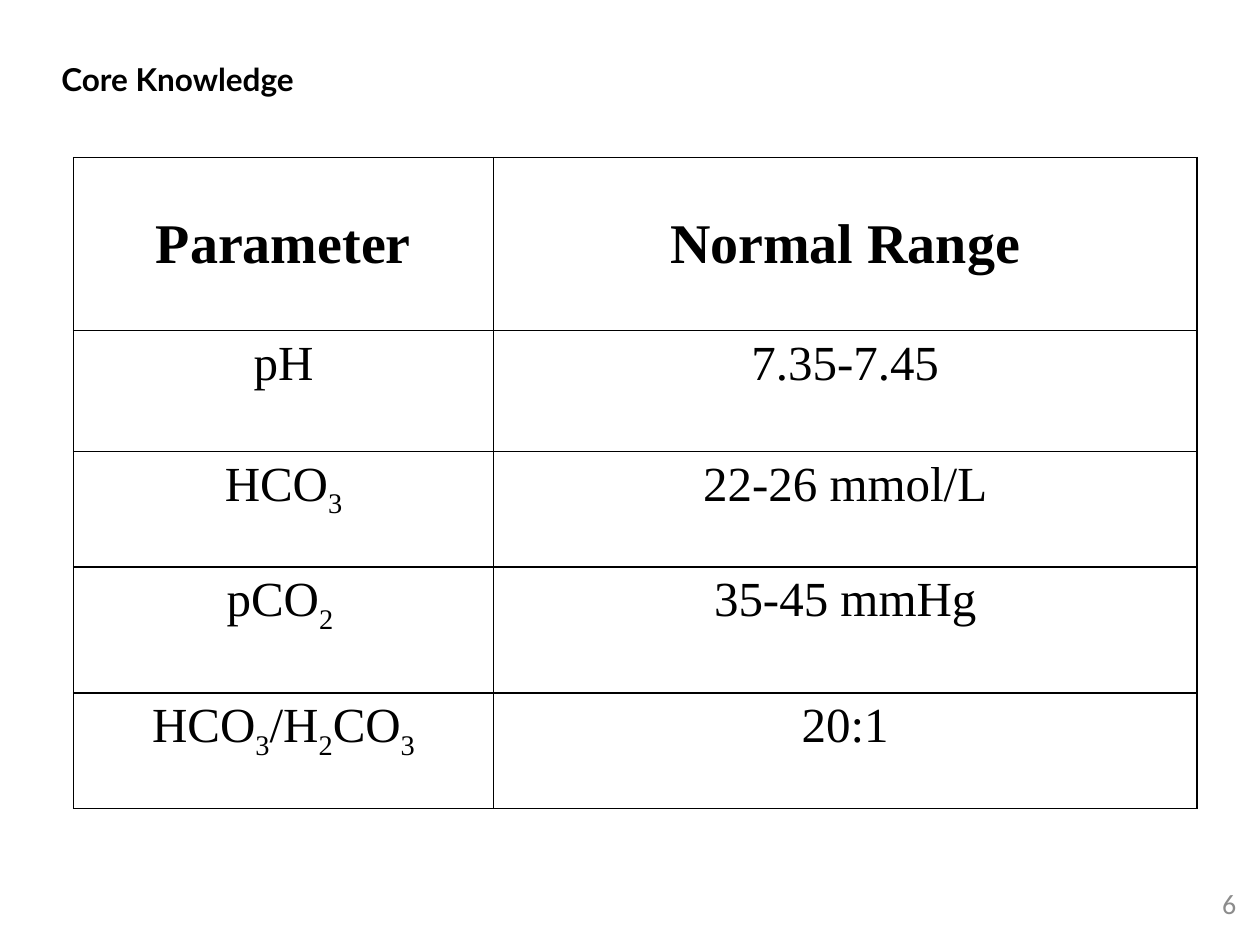
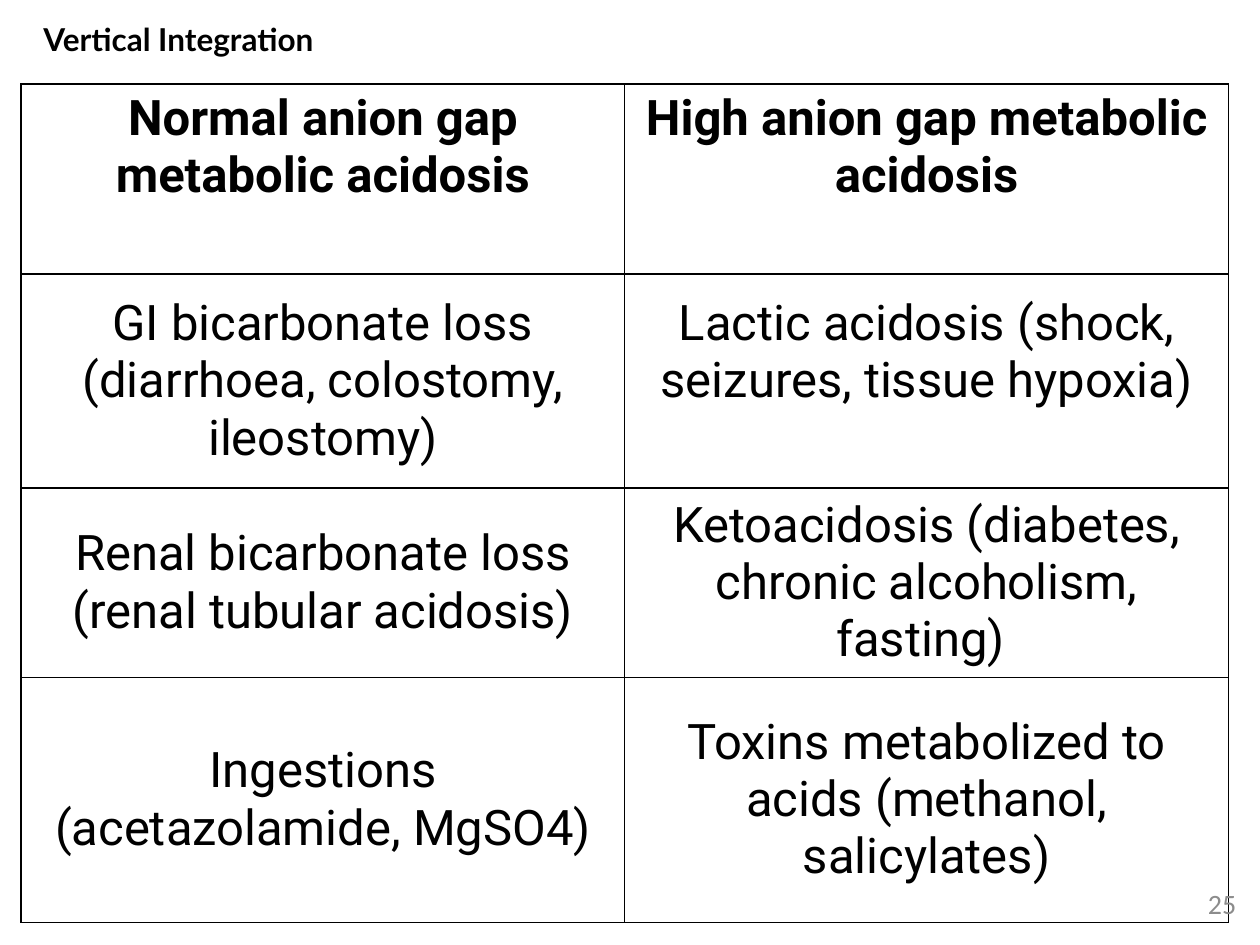
from lxml.etree import SubElement
from pptx import Presentation
from pptx.dml.color import RGBColor
from pptx.enum.text import MSO_ANCHOR as Anchor, PP_ALIGN as Align
from pptx.oxml.ns import qn
from pptx.util import Pt

BLACK = RGBColor(0x00, 0x00, 0x00)
WHITE = RGBColor(0xFF, 0xFF, 0xFF)
GRAY = RGBColor(0x8C, 0x8C, 0x8C)

TITLE_FONT = {"name": "Lato", "size": Pt(18), "bold": True}
NUMBER_FONT = {"name": "Calibri", "size": Pt(16), "bold": False}
NUMBER_BOX = (670.5, 492, 43, 48)
SUBSCRIPT = "-25000"
BORDER_SIDES = ("a:lnL", "a:lnR", "a:lnT", "a:lnB")

RANGES = [
    ("Parameter", "Normal Range"),
    ("pH", "7.35-7.45"),
    ("HCO_3", "22-26 mmol/L"),
    ("pCO_2 ", "35-45 mmHg"),
    ("HCO_3_/H_2_CO_3", "20:1"),
]
ACIDOSIS_CAUSES = [
    ("Normal anion gap metabolic acidosis", "High anion gap metabolic acidosis"),
    ("GI bicarbonate loss (diarrhoea, colostomy, ileostomy)",
     "Lactic acidosis (shock, seizures, tissue hypoxia)"),
    ("Renal bicarbonate loss (renal tubular acidosis)",
     "Ketoacidosis (diabetes, chronic alcoholism, fasting) "),
    ("Ingestions (acetazolamide, MgSO4)",
     "Toxins metabolized to acids (methanol, salicylates)"),
]


def apply_format(target, values):
    """Set each attribute in values on target."""
    for name, value in values.items():
        setattr(target, name, value)


def write_text(paragraph, text, font, color=BLACK):
    """Fill a paragraph, lowering every second part between underscores."""
    for index, part in enumerate(text.split("_")):
        run = paragraph.add_run()
        run.text = part
        apply_format(run.font, font)
        run.font.color.rgb = color
        if index % 2:
            run._r.get_or_add_rPr().set("baseline", SUBSCRIPT)


def add_label(slide, box, text, font, color, frame_format, paragraph_format):
    """Add a one-paragraph text box."""
    frame = slide.shapes.add_textbox(*map(Pt, box)).text_frame
    apply_format(frame, frame_format)
    paragraph = frame.paragraphs[0]
    apply_format(paragraph, paragraph_format)
    write_text(paragraph, text, font, color)


def add_title(slide, box, text):
    """Add the slide heading."""
    add_label(slide, box, text, TITLE_FONT, BLACK, {"word_wrap": False},
              {"alignment": Align.CENTER, "line_spacing": 0.9, "space_after": Pt(6.3)})


def add_slide_number(slide, number):
    """Add the gray number in the bottom right corner."""
    add_label(slide, NUMBER_BOX, str(number), NUMBER_FONT, GRAY,
              {"word_wrap": True, "vertical_anchor": Anchor.MIDDLE},
              {"alignment": Align.RIGHT})


def add_borders(cell):
    """Draw a thin black line on all sides of a cell."""
    properties = cell._tc.get_or_add_tcPr()
    for position, side in enumerate(BORDER_SIDES):
        line = SubElement(properties, qn(side), w=str(Pt(1)))
        fill = SubElement(line, qn("a:solidFill"))
        SubElement(fill, qn("a:srgbClr"), val=str(BLACK))
        properties.insert(position, line)


def add_grid(slide, origin, widths, heights, rows, header, body):
    """Add a bordered table whose header and body are (font, anchor) pairs."""
    box = (*origin, sum(widths), sum(heights))
    table = slide.shapes.add_table(len(rows), len(widths), *map(Pt, box)).table
    apply_format(table, {"first_row": False, "horz_banding": False})
    for column, width in zip(table.columns, widths):
        column.width = Pt(width)
    for row_index, (row, height, texts) in enumerate(zip(table.rows, heights, rows)):
        row.height = Pt(height)
        font, anchor = body if row_index else header
        for cell, text in zip(row.cells, texts):
            cell.fill.solid()
            cell.fill.fore_color.rgb = WHITE
            cell.vertical_anchor = anchor
            paragraph = cell.text_frame.paragraphs[0]
            paragraph.alignment = Align.CENTER
            write_text(paragraph, text, font)
            add_borders(cell)
    return table


def build_ranges(slide):
    """Show the normal range of each blood gas parameter."""
    font = {"name": "Times New Roman", "size": Pt(28), "bold": False}
    header_font = font | {"size": Pt(32), "bold": True}
    add_grid(slide, (42, 90), (240, 402), (99, 69, 66, 72, 66), RANGES,
             (header_font, Anchor.MIDDLE), (font, Anchor.TOP))
    add_slide_number(slide, 6)
    add_title(slide, (24, 33, 155, 26.5), "Core Knowledge")


def build_causes(slide):
    """Compare the causes of the two kinds of metabolic acidosis."""
    font = {"name": "Roboto", "size": Pt(28), "bold": False}
    table = add_grid(slide, (12, 48), (345, 345), (108.5, 122.5, 105, 140),
                     ACIDOSIS_CAUSES, (font | {"bold": True}, Anchor.TOP),
                     (font, Anchor.MIDDLE))
    table.cell(1, 1).margin_bottom = Pt(36.5)
    add_slide_number(slide, 25)
    add_title(slide, (12, 10.5, 180, 26.5), "Vertical Integration")


def main():
    """Build and save the presentation."""
    presentation = Presentation()
    apply_format(presentation, {"slide_width": Pt(720), "slide_height": Pt(540)})
    for build in (build_ranges, build_causes):
        build(presentation.slides.add_slide(presentation.slide_layouts[6]))
    presentation.save("out.pptx")


if __name__ == "__main__":
    main()
